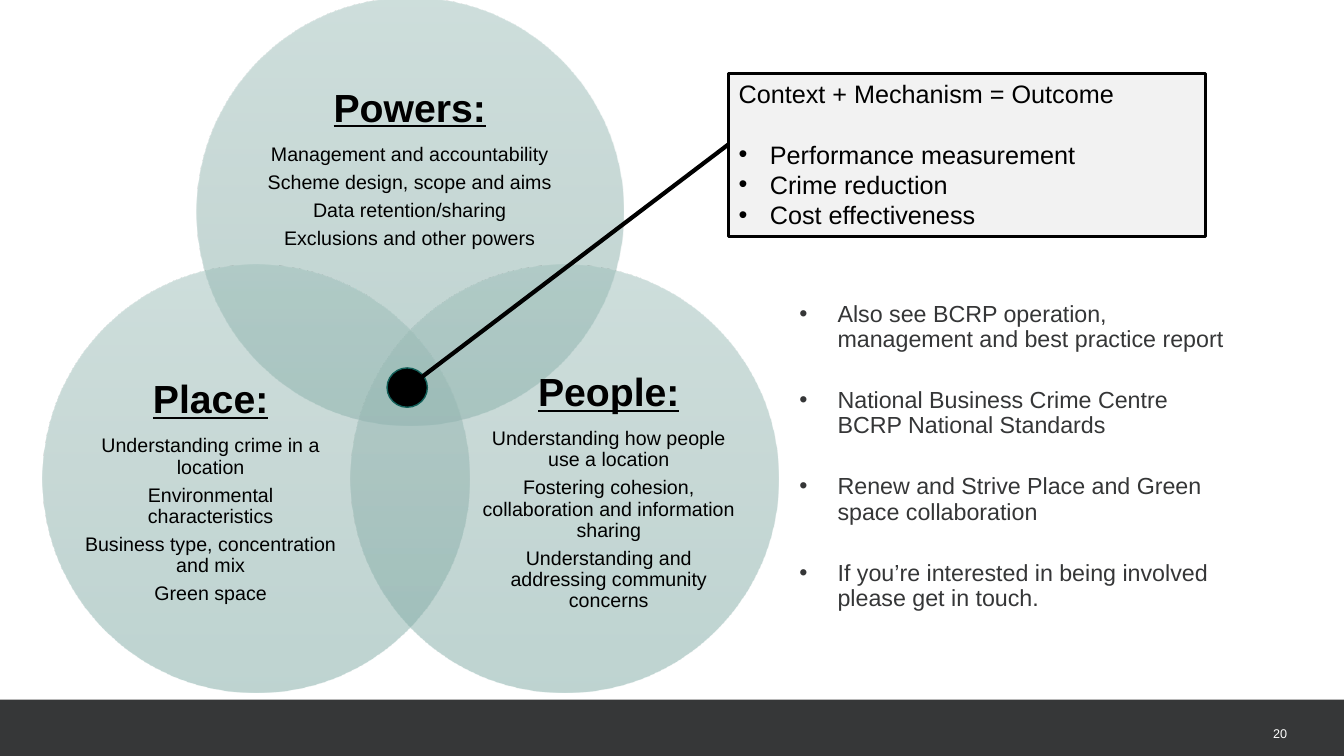
from lxml.etree import SubElement as Sub
from pptx import Presentation
from pptx.dml.color import RGBColor as Rgb
from pptx.enum.shapes import MSO_CONNECTOR as Link, MSO_SHAPE as Shape
from pptx.enum.text import MSO_ANCHOR as Anchor, PP_ALIGN as Align
from pptx.oxml.ns import qn
from pptx.util import Inches, Pt

COLS, ROWS = 160, 90
HEX = {
    "black": "000000", "white": "FFFFFF", "bar": "363738", "text": "353637",
    "panel": "F2F2F2", "rim": "125F59",
    "light": "9EBFBA", "mid": "91B3AE", "deep": "7DAAA4",
}


class Board:
    font = "Arial"

    def __init__(self, deck):
        self.cell = deck.slide_height / ROWS
        self.items = deck.slides.add_slide(deck.slide_layouts[6]).shapes

    def grid(self, *cells):
        return [round(n * self.cell) for n in cells]

    def shape(self, kind, area, fill=None, line=None, width=1):
        item = self.items.add_shape(kind, *self.grid(*area))
        item.shadow.inherit = False
        if fill:
            item.fill.solid()
            item.fill.fore_color.rgb = Rgb.from_string(HEX[fill])
        if line:
            item.line.color.rgb = Rgb.from_string(HEX[line])
            item.line.width = Pt(width)
        else:
            item.line.fill.background()
        return item

    def disc(self, left, top, size):
        item = self.shape(Shape.OVAL, (left, top, size, size))
        props = item.element.spPr
        grad = Sub(props, qn("a:gradFill"), rotWithShape="1")
        props.find(qn("a:prstGeom")).addnext(grad)
        stops = Sub(grad, qn("a:gsLst"))
        for step, name in enumerate(("light", "mid", "deep")):
            stop = Sub(stops, qn("a:gs"), pos=str(step * 50000))
            color = Sub(stop, qn("a:srgbClr"), val=HEX[name])
            Sub(color, qn("a:alpha"), val="50000")
        Sub(grad, qn("a:lin"), ang="5400000", scaled="0")

    def text(self, area, anchor=Anchor.TOP):
        frame = self.items.add_textbox(*self.grid(*area)).text_frame
        frame.word_wrap = True
        frame.vertical_anchor = anchor
        frame.margin_left = frame.margin_right = 0
        frame.margin_top = frame.margin_bottom = 0
        return frame

    def lines(self, frame, rows, size, color="black", align=Align.LEFT,
              space=1.0, indent=0, plain=0):
        paras = []
        for i, row in enumerate(rows):
            para = frame.add_paragraph() if i else frame.paragraphs[0]
            para.text = row
            para.alignment = align
            para.line_spacing = space
            if indent and i >= plain:
                self.bullet(para, indent)
            para.font.name = self.font
            para.font.size = Pt(size)
            para.font.color.rgb = Rgb.from_string(HEX[color])
            paras.append(para)
        return paras

    def bullet(self, para, indent):
        props = para._p.get_or_add_pPr()
        props.set("marL", str(Inches(indent)))
        props.set("indent", str(-Inches(indent)))
        Sub(props, qn("a:buFont"), typeface=self.font)
        Sub(props, qn("a:buChar"), char="•")

    def topic(self, area, title, rows):
        frame = self.text(area, Anchor.MIDDLE)
        head, *rest = self.lines(frame, [title, *rows], 14,
                                 align=Align.CENTER, space=0.9)
        head.font.size = Pt(28)
        head.font.bold = head.font.underline = True
        head.space_after = Pt(9.8)
        for para in rest:
            para.space_after = Pt(4.9)

    def link(self, start, end, color, width):
        item = self.items.add_connector(Link.STRAIGHT, *self.grid(*start, *end))
        item.line.color.rgb = Rgb.from_string(HEX[color])
        item.line.width = Pt(width)
        Sub(item.element.spPr, qn("a:effectLst"))


TOPICS = [
    (0, 0, (30.12, 8.64, 37.32, 22.92), "Powers:", [
        "Management and accountability", "Scheme design, scope and aims",
        "Data retention/sharing", "Exclusions and other powers"]),
    (1, 1, (57.24, 44.64, 30.48, 27.96), "People:", [
        "Understanding how people use a location",
        "Fostering cohesion, collaboration and information sharing",
        "Understanding and addressing community concerns"]),
    (-1, 1, (9.84, 44.64, 30.48, 27.96), "Place:", [
        "Understanding crime in a location", "Environmental characteristics",
        "Business type, concentration and mix", "Green space"]),
]
GOALS = [
    "Context + Mechanism = Outcome",
    "Performance measurement", "Crime reduction", "Cost effectiveness",
]
NOTES = [
    "Also see BCRP operation, management and best practice report",
    "National Business Crime Centre BCRP National Standards",
    "Renew and Strive Place and Green space collaboration",
    "If you’re interested in being involved please get in touch.",
]


def main():
    deck = Presentation()
    deck.slide_height = Inches(7.5)
    deck.slide_width = round(deck.slide_height * COLS / ROWS)
    board = Board(deck)

    board.shape(Shape.RECTANGLE, (0, 83.28, COLS, ROWS - 83.28), "bar")
    page = board.text((146.64, 83.28, 6.6, 6.6), Anchor.MIDDLE)
    board.lines(page, ["20"], 9, "white", Align.RIGHT, Pt(19))

    for side, down, area, title, rows in TOPICS:
        board.disc(23.4 + side * 18.36, -0.24 + down * 31.8, 50.88)
        board.topic(area, title, rows)

    notes = board.text((95.16, 36, 51.48, 41.88))
    paras = board.lines(notes, NOTES, 16.6, "text", space=0.9, indent=0.38)
    for para in paras[1:]:
        para.space_before = Pt(25.7)

    board.shape(Shape.OVAL, (46.08, 43.8, 4.8, 4.68), "black", "rim")
    board.link((48.48, 46.2), (86.76, 17.16), "black", 3)

    panel = board.shape(Shape.RECTANGLE, (86.76, 8.76, 56.76, 19.44),
                        "panel", "black", 2.25).text_frame
    panel.word_wrap = True
    panel.vertical_anchor = Anchor.TOP
    goals = board.lines(panel, GOALS, 18, indent=0.31, plain=1)
    goals[1].space_before = Pt(21.5)

    deck.save("out.pptx")


if __name__ == "__main__":
    main()
